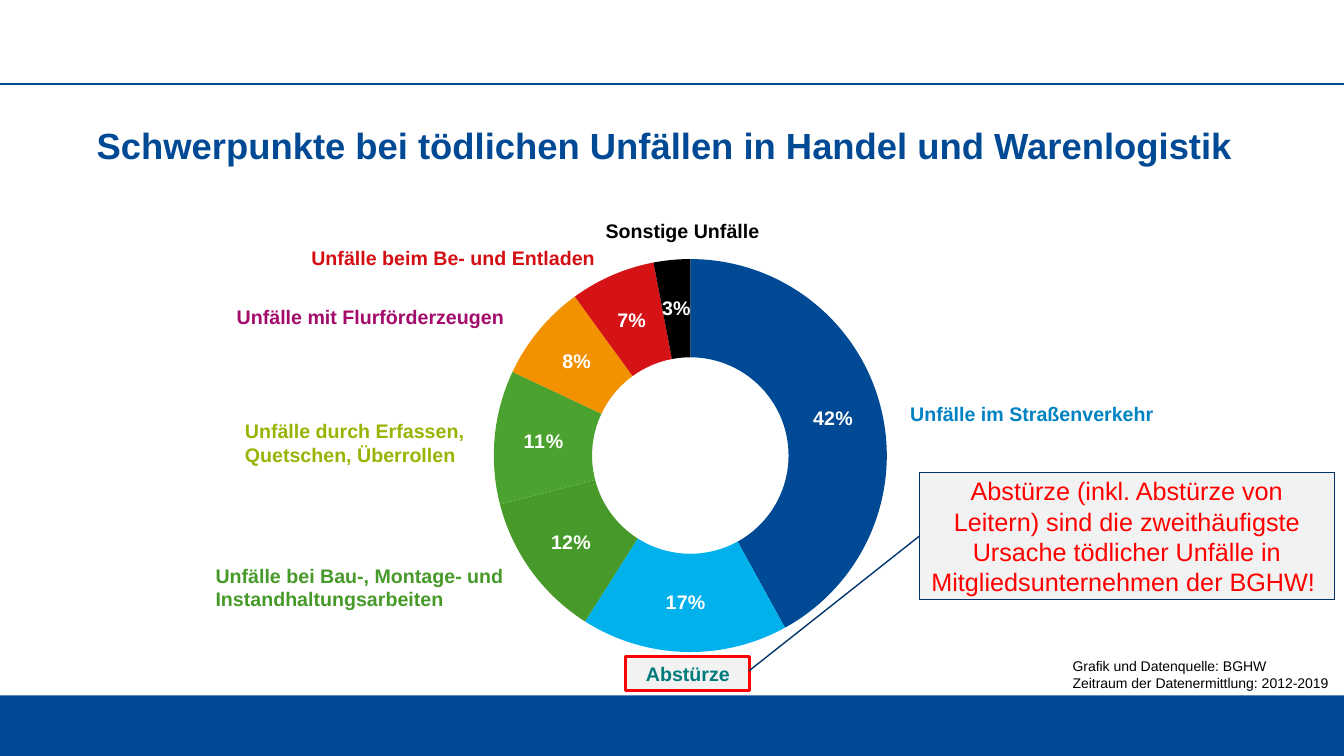
"""Build the slide on fatal accidents in trade and logistics."""
from lxml import etree
from pptx import Presentation
from pptx.chart.data import CategoryChartData
from pptx.dml.color import RGBColor
from pptx.enum import chart as ch, shapes, text
from pptx.oxml import ns
from pptx.util import Pt

BLUE = RGBColor(0x00, 0x49, 0x94)
NAVY = RGBColor(0x00, 0x36, 0x6D)
SKY = RGBColor(0x00, 0xB1, 0xEB)
SEA = RGBColor(0x00, 0x83, 0xC2)
TEAL = RGBColor(0x00, 0x7B, 0x7D)
GREEN = RGBColor(0x47, 0x9A, 0x2A)
LEAF = RGBColor(0x4C, 0xA2, 0x2F)
LIME = RGBColor(0x9B, 0xB3, 0x05)
AMBER = RGBColor(0xF3, 0x92, 0x00)
CRIMSON = RGBColor(0xD5, 0x13, 0x17)
RUBY = RGBColor(0xD4, 0x0F, 0x14)
PLUM = RGBColor(0xA3, 0x0A, 0x6A)
RED = RGBColor(0xFF, 0x00, 0x00)
GREY = RGBColor(0xF2, 0xF2, 0xF2)
BLACK = RGBColor(0x00, 0x00, 0x00)
WHITE = RGBColor(0xFF, 0xFF, 0xFF)

FONT = "Arial"
WIDE, HIGH = 960, 540
BAND, RULE = 496.8, 60
TITLE = "Schwerpunkte bei tödlichen Unfällen in Handel und Warenlogistik"
SLICES = [(42, BLUE), (17, SKY), (12, GREEN), (11, LEAF),
          (8, AMBER), (7, CRIMSON), (3, BLACK)]
RING = (281.5, 179.3, 419, 286.6)
PLOT = {"x": 0.17, "y": 0.02, "w": 0.67, "h": 0.98}
LABELS = [
    ("Unfälle im Straßenverkehr", SEA, (643, 283.7, 219.6, 24.5)),
    ("Unfälle bei Bau-, Montage- und Instandhaltungsarbeiten", GREEN,
     (146.9, 399, 240.5, 41)),
    ("Unfälle durch Erfassen, Quetschen, Überrollen", LIME,
     (167.8, 296, 181.4, 41)),
    ("Unfälle mit Flurförderzeugen", PLUM, (162, 214.6, 211, 24.5)),
    ("Unfälle beim Be- und Entladen", RUBY, (215.3, 172, 219.6, 24.5)),
    ("Sonstige Unfälle", BLACK, (425.5, 152.6, 131.8, 24.5)),
]
FALLS = ("Abstürze", TEAL, (447.1, 468.7, 88.6, 24.5))
NOTE = ("Abstürze (inkl. Abstürze von Leitern) sind die zweithäufigste "
        "Ursache tödlicher Unfälle in Mitgliedsunternehmen der BGHW! ")
SPOT = (656.6, 337.7, 296.6, 90.7)
TAIL = (0.5, 0, 1.56, -0.41)
SOURCE = ["Grafik und Datenquelle: BGHW",
          "Zeitraum der Datenermittlung: 2012-2019"]
CREDIT = (763.2, 466.6, 198, 30.2)


def write(frame, lines, size, hue, bold=False, align=text.PP_ALIGN.LEFT):
    frame.word_wrap = True
    for i, line in enumerate(lines):
        para = frame.add_paragraph() if i else frame.paragraphs[0]
        para.alignment = align
        run = para.add_run()
        run.text = line
        font = run.font
        font.name, font.size, font.bold = FONT, Pt(size), bold
        font.color.rgb = hue


def label(slide, lines, size, hue, box, bold=False):
    frame = slide.shapes.add_textbox(*map(Pt, box)).text_frame
    write(frame, lines, size, hue, bold)
    return frame


def panel(slide, kind, box, fill, line=None, width=1):
    shape = slide.shapes.add_shape(kind, *map(Pt, box))
    shape.shadow.inherit = False
    shape.fill.solid()
    shape.fill.fore_color.rgb = fill
    if line is None:
        shape.line.fill.background()
    else:
        shape.line.color.rgb = line
        shape.line.width = Pt(width)
    return shape


def frame_page(slide):
    panel(slide, shapes.MSO_SHAPE.RECTANGLE,
          (0, BAND, WIDE, HIGH - BAND), BLUE)
    rule = slide.shapes.add_connector(
        shapes.MSO_CONNECTOR.STRAIGHT, 0, Pt(RULE), Pt(WIDE), Pt(RULE))
    rule.line.color.rgb = BLUE
    rule.line.width = Pt(2)
    etree.SubElement(rule._element.spPr, ns.qn("a:effectLst"))


def head(slide):
    title = slide.shapes.title
    title.left, title.top, title.width, title.height = map(
        Pt, (69, 91.4, 822.4, 41))
    frame = title.text_frame
    frame.margin_left = frame.margin_top = 0
    frame.vertical_anchor = text.MSO_ANCHOR.TOP
    write(frame, [TITLE], 26, BLUE, True)
    frame.paragraphs[0].line_spacing = 0.9


def donut(slide):
    data = CategoryChartData()
    data.categories = [str(i + 1) for i in range(len(SLICES))]
    data.add_series("Series 1", [share for share, hue in SLICES])
    chart = slide.shapes.add_chart(
        ch.XL_CHART_TYPE.DOUGHNUT, *map(Pt, RING), data).chart
    chart.has_legend = chart.has_title = False
    chart.font.name, chart.font.size = FONT, Pt(18)
    chart.font.color.rgb = BLACK
    plot = chart.plots[0]
    plot.vary_by_categories = True
    for i, (share, hue) in enumerate(SLICES):
        fill = plot.series[0].points[i].format.fill
        fill.solid()
        fill.fore_color.rgb = hue
    plot.has_data_labels = True
    tags = plot.data_labels
    tags.show_percentage, tags.show_value = True, False
    tags.number_format, tags.number_format_is_linked = "0%", False
    tags.font.name, tags.font.size, tags.font.bold = FONT, Pt(14), True
    tags.font.color.rgb = WHITE
    plot._element.find(ns.qn("c:holeSize")).set("val", "50")
    area = chart._chartSpace.chart.plotArea
    for old in area.findall(ns.qn("c:layout")):
        area.remove(old)
    layout = etree.Element(ns.qn("c:layout"))
    area.insert(0, layout)
    manual = etree.SubElement(layout, ns.qn("c:manualLayout"))
    rules = {"layoutTarget": "inner", "xMode": "edge", "yMode": "edge", **PLOT}
    for key, value in rules.items():
        etree.SubElement(manual, ns.qn("c:" + key)).set("val", str(value))


def main():
    deck = Presentation()
    deck.slide_width, deck.slide_height = Pt(WIDE), Pt(HIGH)
    slide = deck.slides.add_slide(deck.slide_layouts[5])
    frame_page(slide)
    head(slide)
    donut(slide)
    word, hue, box = FALLS
    falls = panel(slide, shapes.MSO_SHAPE.RECTANGLE, box, GREY, RED, 2.25)
    write(falls.text_frame, [word], 14, hue, True, text.PP_ALIGN.CENTER)
    note = panel(slide, shapes.MSO_SHAPE.LINE_CALLOUT_1, SPOT, GREY, NAVY)
    for i, value in enumerate(TAIL):
        note.adjustments[i] = value
    note.text_frame.vertical_anchor = text.MSO_ANCHOR.MIDDLE
    write(note.text_frame, [NOTE], 18, RED, align=text.PP_ALIGN.CENTER)
    for words, hue, box in LABELS:
        label(slide, [words], 14, hue, box, True)
    credit = label(slide, SOURCE, 10, BLACK, CREDIT)
    credit.margin_left = credit.margin_right = Pt(2.9)
    credit.margin_top = credit.margin_bottom = Pt(2.9)
    deck.save("out.pptx")


if __name__ == "__main__":
    main()
